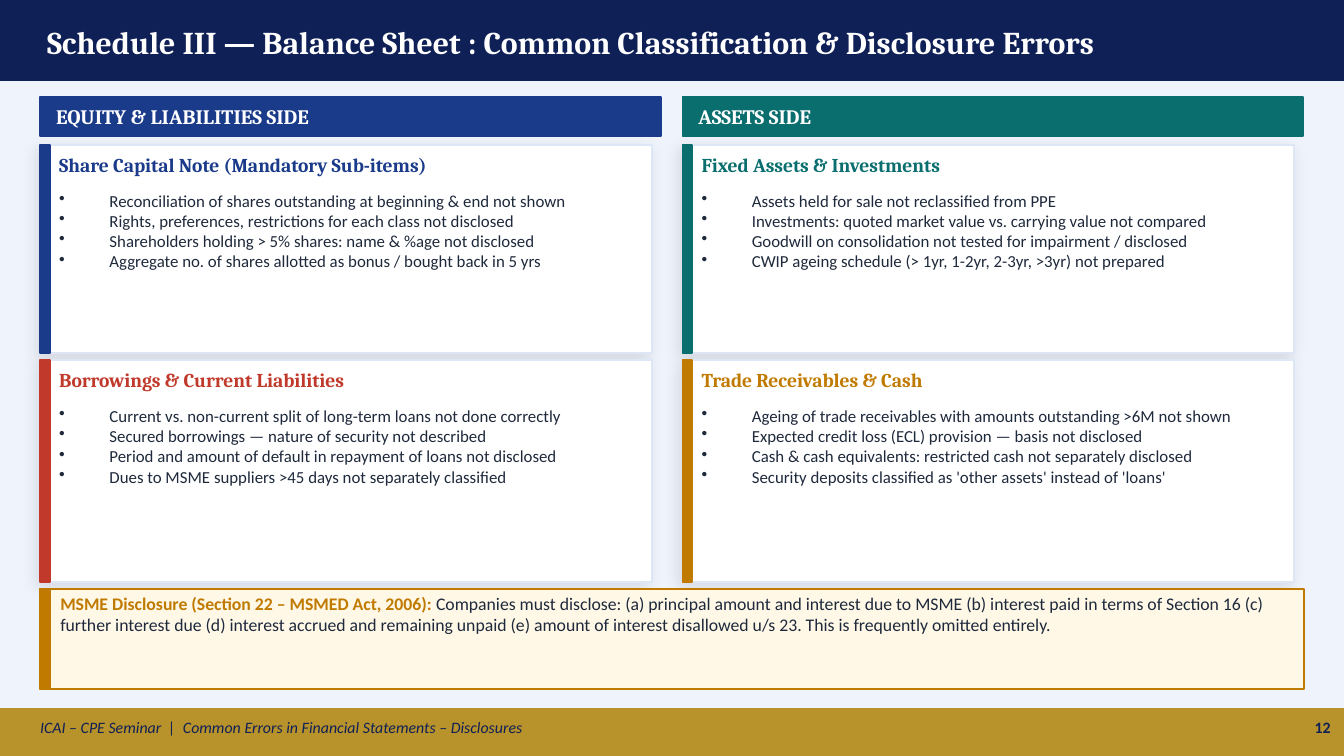
from lxml import etree
from pptx import Presentation
from pptx import util as u
from pptx.dml.color import RGBColor
from pptx.enum import shapes, text
from pptx.oxml import ns

COLOURS = {
    "navy": "0F2056", "blue": "1A3A8A", "teal": "0A6E6E", "red": "C0392B",
    "amber": "C07A00", "gold": "B8922A", "cream": "FFF8E7", "pale": "EFF3FB",
    "edge": "DEE7F5", "white": "FFFFFF", "ink": "1E293B", "black": "000000",
}
WIDTH, HEIGHT = 25.4, 14.29
MARGIN, BAR = 0.76, 0.18
COLUMN_STEP, HEADER_WIDTH, CARD_WIDTH = 12.14, 11.73, 11.56
INDENT = 0.95
ROWS = [(2.74, 3.94), (6.81, 4.19)]

SIDES = [
    ("EQUITY & LIABILITIES SIDE", "blue", [
        ("Share Capital Note (Mandatory Sub-items)", "blue", [
            "Reconciliation of shares outstanding at beginning & end not shown",
            "Rights, preferences, restrictions for each class not disclosed",
            "Shareholders holding > 5% shares: name & %age not disclosed",
            "Aggregate no. of shares allotted as bonus / bought back in 5 yrs",
        ]),
        ("Borrowings & Current Liabilities", "red", [
            "Current vs. non-current split of long-term loans not done correctly",
            "Secured borrowings — nature of security not described",
            "Period and amount of default in repayment of loans not disclosed",
            "Dues to MSME suppliers >45 days not separately classified",
        ]),
    ]),
    ("ASSETS SIDE", "teal", [
        ("Fixed Assets & Investments", "teal", [
            "Assets held for sale not reclassified from PPE",
            "Investments: quoted market value vs. carrying value not compared",
            "Goodwill on consolidation not tested for impairment / disclosed",
            "CWIP ageing schedule (> 1yr, 1-2yr, 2-3yr, >3yr) not prepared",
        ]),
        ("Trade Receivables & Cash", "amber", [
            "Ageing of trade receivables with amounts outstanding >6M not shown",
            "Expected credit loss (ECL) provision — basis not disclosed",
            "Cash & cash equivalents: restricted cash not separately disclosed",
            "Security deposits classified as 'other assets' instead of 'loans'",
        ]),
    ]),
]
NOTE_LEAD = "MSME Disclosure (Section 22 – MSMED Act, 2006): "
NOTE_BODY = (
    "Companies must disclose: (a) principal amount and interest due to MSME "
    "(b) interest paid in terms of Section 16 (c) further interest due "
    "(d) interest accrued and remaining unpaid (e) amount of interest "
    "disallowed u/s 23. This is frequently omitted entirely."
)


class SlideBuilder:
    """Holds the style and the current slide, and draws each kind of element."""

    heading, body = "Cambria", "Calibri"

    def __init__(self, slide):
        self.slide = slide

    def colour(self, name):
        return RGBColor.from_string(COLOURS[name])

    def block(self, left, top, width, height, fill, line=None, shadow=False):
        rect = self.slide.shapes.add_shape(
            shapes.MSO_SHAPE.RECTANGLE, *map(u.Cm, (left, top, width, height)))
        rect.fill.solid()
        rect.fill.fore_color.rgb = self.colour(fill)
        rect.line.color.rgb = self.colour(line or fill)
        rect.line.width = u.Pt(1)
        rect.shadow.inherit = False
        if shadow:
            self.soft_shadow(rect)

    def soft_shadow(self, rect):
        effects = rect.element.spPr.find(ns.qn("a:effectLst"))
        outer = etree.SubElement(
            effects, ns.qn("a:outerShdw"), blurRad=str(u.Pt(8)), dist=str(u.Pt(3)),
            dir=str(135 * 60000), algn="bl", rotWithShape="0")
        tint = etree.SubElement(outer, ns.qn("a:srgbClr"), val=COLOURS["black"])
        etree.SubElement(tint, ns.qn("a:alpha"), val="10000")

    def style(self, run, size, colour, font, bold=False, italic=False):
        run.font.size = u.Pt(size)
        run.font.name = font
        run.font.bold = bold
        run.font.italic = italic
        run.font.color.rgb = self.colour(colour)

    def label(self, left, top, width, height, words, size, colour, font,
              bold=False, italic=False, middle=False):
        box = self.slide.shapes.add_textbox(*map(u.Cm, (left, top, width, height)))
        frame = box.text_frame
        frame.word_wrap = True
        frame.margin_left = frame.margin_right = 0
        frame.margin_top = frame.margin_bottom = 0
        anchor = text.MSO_ANCHOR
        frame.vertical_anchor = anchor.MIDDLE if middle else anchor.TOP
        frame.text = words
        for paragraph in frame.paragraphs:
            for run in paragraph.runs:
                self.style(run, size, colour, font, bold, italic)
        return frame

    def bullets(self, left, top, width, height, items):
        frame = self.label(left, top, width, height, "\n".join(items), 9, "ink", self.body)
        for paragraph in frame.paragraphs:
            properties = paragraph._p.get_or_add_pPr()
            properties.set("marL", str(u.Cm(INDENT)))
            properties.set("indent", str(-u.Cm(INDENT)))
            etree.SubElement(properties, ns.qn("a:buChar"), char="•")

    def header(self, left, title, colour):
        self.block(left, 1.83, HEADER_WIDTH, 0.74, colour)
        self.label(left + 0.3, 1.85, 11.18, 0.69, title, 11, "white", self.heading,
                   bold=True, middle=True)

    def card(self, left, top, height, title, colour, items):
        self.block(left, top, CARD_WIDTH, height, "white", "edge", shadow=True)
        self.block(left, top, BAR, height, colour)
        inner = left + 0.36
        self.label(inner, top + 0.15, 11.05, 0.66, title, 10.5, colour,
                   self.heading, bold=True)
        self.bullets(inner, top + 0.86, 11.05, height - 1.07, items)

    def note(self, top, height, lead, words):
        self.block(MARGIN, top, WIDTH - 2 * MARGIN, height, "cream", "amber")
        self.block(MARGIN, top, BAR, height, "amber")
        frame = self.label(1.14, top + 0.08, 23.11, height - 0.18, lead, 9.5, "amber",
                           self.body, bold=True)
        detail = frame.paragraphs[0].add_run()
        detail.text = words
        self.style(detail, 9.5, "ink", self.body)

    def title(self, words):
        self.block(0, 0, WIDTH, 1.52, "navy")
        self.label(0.89, 0.2, 23.62, 1.19, words, 17, "white", self.heading,
                   bold=True, middle=True)

    def footer(self, words, number):
        self.block(0, 13.4, WIDTH, 0.89, "gold")
        self.label(MARGIN, 13.41, 22.35, 0.69, words, 8.5, "navy", self.body,
                   italic=True, middle=True)
        page = self.label(24.13, 13.41, 1.02, 0.69, number, 8.5, "navy", self.body,
                          bold=True, middle=True)
        page.paragraphs[0].alignment = text.PP_ALIGN.RIGHT


def main():
    deck = Presentation()
    deck.slide_width, deck.slide_height = u.Cm(WIDTH), u.Cm(HEIGHT)
    builder = SlideBuilder(deck.slides.add_slide(deck.slide_layouts[6]))
    builder.block(0, 0, WIDTH, HEIGHT, "pale")
    builder.title("Schedule III — Balance Sheet : Common Classification & Disclosure Errors")
    for column, (side, side_colour, cards) in enumerate(SIDES):
        left = MARGIN + column * COLUMN_STEP
        builder.header(left, side, side_colour)
        for (top, height), (title, colour, items) in zip(ROWS, cards):
            builder.card(left, top, height, title, colour, items)
    builder.note(11.13, 1.9, NOTE_LEAD, NOTE_BODY)
    builder.footer(
        "ICAI – CPE Seminar  |  Common Errors in Financial Statements – Disclosures", "12")
    deck.save("out.pptx")


if __name__ == "__main__":
    main()
